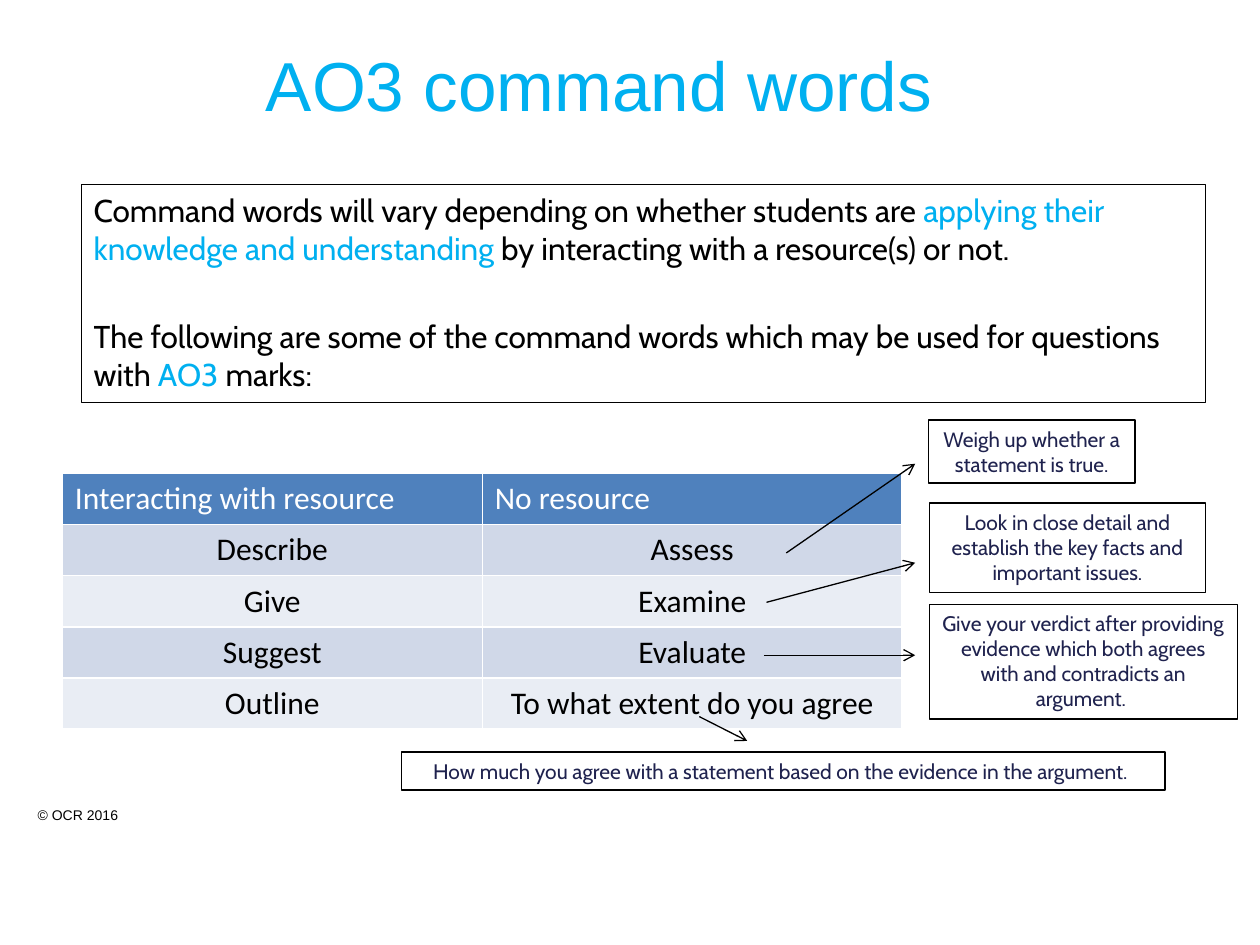
from lxml import etree
from pptx import Presentation
from pptx.dml.color import RGBColor
from pptx.enum.shapes import MSO_CONNECTOR
from pptx.enum.text import MSO_ANCHOR, PP_ALIGN
from pptx.oxml.ns import qn
from pptx.util import Pt

COLORS = {
    "black": "000000", "white": "FFFFFF", "accent": "00B0F0", "navy": "1F224E",
    "header": "4F81BD", "band_dark": "D0D8E8", "band_light": "E9EDF4",
}

ROWS = [
    ("Interacting with resource", "No resource"),
    ("Describe", "Assess"),
    ("Give", "Examine"),
    ("Suggest", "Evaluate"),
    ("Outline", "To what extent do you agree"),
]

INTRO = [
    [("Command words will vary depending on whether students are ", "black"),
     ("applying their knowledge and understanding", "accent"),
     (" by interacting with a resource(s) or not.", "black")],
    [("The following are some of the command words which may be used for questions with ", "black"),
     ("AO3 ", "accent"),
     ("marks:", "black")],
]

# text, box (left, top, width, height), fill
CALLOUTS = [
    ("Weigh up whether a statement is true.", (530.6, 240, 118, 36), None),
    ("Look in close detail and establish the key facts and important issues.",
     (531, 287.5, 158, 51), None),
    ("Give your verdict after providing evidence which both agrees with and contradicts an argument. ",
     (531, 345.3, 176, 65.7), None),
    ("How much you agree with a statement based on the evidence in the argument. ",
     (229.3, 429.8, 436.5, 21.7), "white"),
]

# start x, start y, end x, end y
ARROWS = [
    (449.3, 316, 523, 265),
    (438, 344.2, 523, 321.6),
    (436.5, 374.4, 523, 374.4),
    (399.6, 409.5, 427, 423.4),
]


def rgb(name):
    return RGBColor.from_string(COLORS[name])


def add_run(p, text, size, font, color):
    r = p.add_run()
    r.text = text
    r.font.size = Pt(size)
    r.font.name = font
    r.font.color.rgb = rgb(color)


def add_box(s, box, line=True, fill=None):
    """Add a wrapping text box, outlined unless told otherwise."""
    sp = s.shapes.add_textbox(*map(Pt, box))
    sp.text_frame.word_wrap = True
    if line:
        sp.line.color.rgb = rgb("black")
        sp.line.width = Pt(0.75)
    if fill:
        sp.fill.solid()
        sp.fill.fore_color.rgb = rgb(fill)
    return sp.text_frame


def add_title(s, box):
    sp = s.shapes.title
    sp.left, sp.top, sp.width, sp.height = map(Pt, box)
    tf = sp.text_frame
    tf.vertical_anchor = MSO_ANCHOR.MIDDLE
    p = tf.paragraphs[0]
    p.alignment = PP_ALIGN.CENTER
    add_run(p, "AO3 command words", 39.6, "Arial", "accent")


def add_intro(s, box):
    tf = add_box(s, box)
    for i, runs in enumerate(INTRO):
        p = tf.add_paragraph() if i else tf.paragraphs[0]
        if i:
            p.space_before = Pt(29)
        for text, color in runs:
            add_run(p, text, 18, "Cabin", color)


def add_command_table(s, box):
    table = s.shapes.add_table(len(ROWS), len(ROWS[0]), *map(Pt, box)).table
    for i, row in enumerate(ROWS):
        fill = ("band_dark" if i % 2 else "band_light") if i else "header"
        for j, text in enumerate(row):
            cell = table.cell(i, j)
            cell.fill.solid()
            cell.fill.fore_color.rgb = rgb(fill)
            p = cell.text_frame.paragraphs[0]
            p.alignment = PP_ALIGN.CENTER if i else PP_ALIGN.LEFT
            add_run(p, text, 18, "Calibri", "black" if i else "white")
            p.runs[0].font.bold = False


def add_callout(s, text, box, fill):
    p = add_box(s, box, fill=fill).paragraphs[0]
    p.alignment = PP_ALIGN.CENTER
    add_run(p, text, 12, "Cabin", "navy")


def add_arrow(s, ends):
    cxn = s.shapes.add_connector(MSO_CONNECTOR.STRAIGHT, *map(Pt, ends))
    cxn.line.color.rgb = rgb("black")
    cxn.line.width = Pt(0.75)
    etree.SubElement(cxn.line._get_or_add_ln(), qn("a:tailEnd"), type="arrow")
    etree.SubElement(cxn._element.spPr, qn("a:effectLst"))


def add_copyright(s, box):
    p = add_box(s, box, line=False).paragraphs[0]
    add_run(p, "© OCR 2016", 8, "Arial", "black")


def main():
    prs = Presentation()
    prs.slide_width, prs.slide_height = Pt(720), Pt(540)
    s = prs.slides.add_slide(prs.slide_layouts[5])
    add_copyright(s, (14.4, 457.2, 136, 17))
    add_title(s, (0, 21, 684.7, 54))
    add_intro(s, (46.5, 105.5, 642.5, 124.5))
    add_command_table(s, (35.6, 270.6, 480, 146))
    for text, box, fill in CALLOUTS:
        add_callout(s, text, box, fill)
    for ends in ARROWS:
        add_arrow(s, ends)
    prs.save("out.pptx")


if __name__ == "__main__":
    main()
